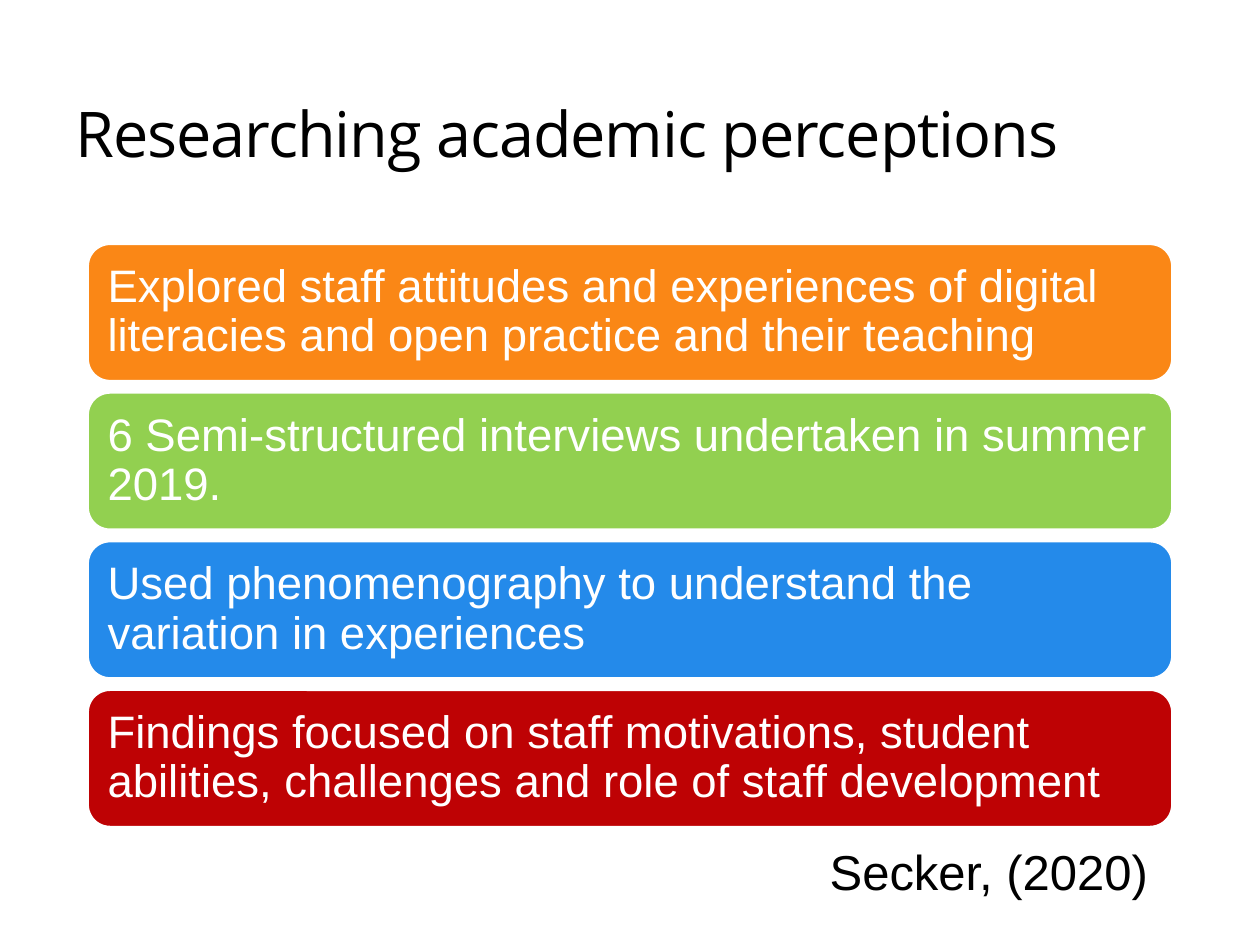
from dataclasses import dataclass

from pptx import Presentation
from pptx import util as u
from pptx.dml import color
from pptx.enum import shapes, text


@dataclass(frozen=True)
class Theme:
    title_font: str = "Open Sans"
    body_font: str = "Arial"
    title_size: int = 36
    card_size: int = 26
    citation_size: int = 28
    dark: str = "000000"
    light: str = "FFFFFF"
    cards: tuple = ("FA8716", "92D050", "248AEA", "BE0204")


THEME = Theme()
WIDTH, HEIGHT = u.Inches(10), u.Inches(7.5)
CARD_LEFT, CARD_WIDTH = 6.9, 86.2
CARD_TOP, CARD_HEIGHT, CARD_PITCH = 25.73, 14.67, 15.73
FINDINGS = (
    "Explored staff attitudes and experiences of digital literacies and open practice and their teaching",
    "6 Semi-structured interviews undertaken in summer 2019.",
    "Used phenomenography to understand the variation in experiences",
    "Findings focused on staff motivations, student abilities, challenges and role of staff development",
)


def area(left, top, width, height):
    return [int(share * side / 100) for share, side in
            zip((left, top, width, height), (WIDTH, HEIGHT, WIDTH, HEIGHT))]


def rgb(value):
    return color.RGBColor.from_string(value)


def write(shape, words, font, size, ink, anchor, align):
    frame = shape.text_frame
    frame.word_wrap = True
    frame.vertical_anchor = anchor
    frame.text = words
    paragraph = frame.paragraphs[0]
    paragraph.alignment = align
    run = paragraph.runs[0]
    run.font.name = font
    run.font.size = u.Pt(size)
    run.font.color.rgb = rgb(ink)
    return paragraph


def add_title(slide, words):
    shape = slide.shapes.add_textbox(*area(5, 2.27, 80.8, 16.4))
    paragraph = write(shape, words, THEME.title_font, THEME.title_size, THEME.dark,
                      text.MSO_ANCHOR.BOTTOM, text.PP_ALIGN.LEFT)
    paragraph.runs[0].font._element.set("spc", "-60")


def add_card(slide, row, words, fill):
    top = CARD_TOP + row * CARD_PITCH
    shape = slide.shapes.add_shape(shapes.MSO_SHAPE.ROUNDED_RECTANGLE,
                                   *area(CARD_LEFT, top, CARD_WIDTH, CARD_HEIGHT))
    shape.shadow.inherit = False
    shape.fill.solid()
    shape.fill.fore_color.rgb = rgb(fill)
    shape.line.color.rgb = rgb(THEME.light)
    shape.line.width = u.Pt(2.25)
    frame = shape.text_frame
    frame.margin_left = frame.margin_right = u.Inches(0.11)
    frame.margin_top = frame.margin_bottom = u.Inches(0.11)
    paragraph = write(shape, words, THEME.body_font, THEME.card_size, THEME.light,
                      text.MSO_ANCHOR.MIDDLE, text.PP_ALIGN.LEFT)
    paragraph.line_spacing = 0.9


def add_citation(slide, words):
    shape = slide.shapes.add_textbox(*area(58.1, 88.4, 35.1, 7.6))
    shape.text_frame.margin_right = u.Inches(0.21)
    write(shape, words, THEME.body_font, THEME.citation_size, THEME.dark,
          text.MSO_ANCHOR.TOP, text.PP_ALIGN.RIGHT)


def main():
    presentation = Presentation()
    presentation.slide_width, presentation.slide_height = WIDTH, HEIGHT
    slide = presentation.slides.add_slide(presentation.slide_layouts[6])
    add_title(slide, "Researching academic perceptions")
    for row, (words, fill) in enumerate(zip(FINDINGS, THEME.cards)):
        add_card(slide, row, words, fill)
    add_citation(slide, "Secker, (2020)")
    presentation.save("out.pptx")


if __name__ == "__main__":
    main()
